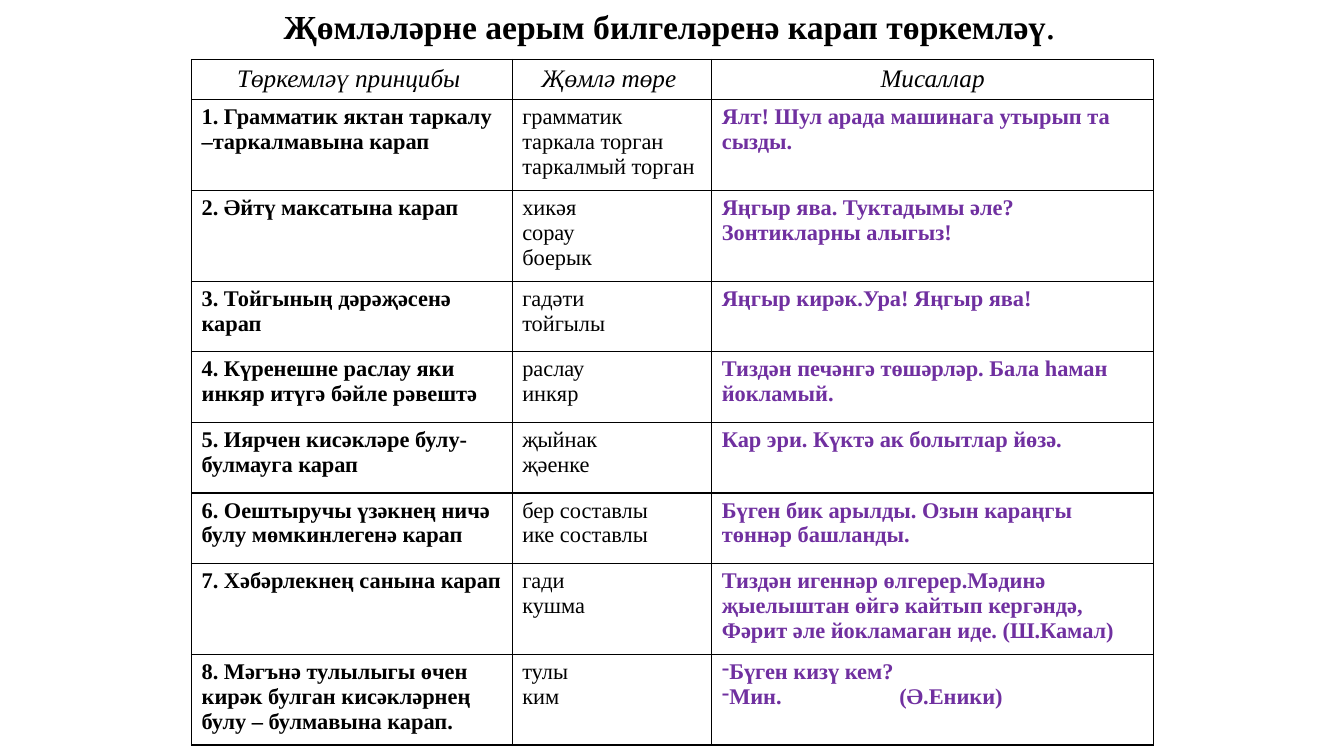
from lxml import etree
from pptx import Presentation
from pptx.dml.color import RGBColor
from pptx.enum.text import MSO_ANCHOR, PP_ALIGN
from pptx.oxml.ns import qn
from pptx.util import Inches, Pt

CENTER = PP_ALIGN.CENTER
LEFT = PP_ALIGN.LEFT
MIDDLE = MSO_ANCHOR.MIDDLE
FONT = "Times New Roman"
COLORS = {"text": "000000", "example": "7030A0", "border": "000000"}

headings = ["Төркемләү принцибы ", "Җөмлә төре ", "Мисаллар"]
classification = [
    ("1. Грамматик яктан таркалу –таркалмавына карап",
     ["грамматик", "таркала торган", "таркалмый торган"],
     ["Ялт! Шул арада машинага утырып та сызды."]),
    ("2. Әйтү максатына карап",
     ["хикәя", "сорау", "боерык"],
     ["Яңгыр ява. Туктадымы әле? Зонтикларны алыгыз!"]),
    ("3. Тойгының дәрәҗәсенә карап",
     ["гадәти", "тойгылы"],
     ["Яңгыр кирәк.Ура! Яңгыр ява!"]),
    ("4. Күренешне раслау яки инкяр итүгә бәйле рәвештә",
     ["раслау", "инкяр"],
     ["Тиздән печәнгә төшәрләр. Бала һаман йокламый."]),
    ("5. Иярчен кисәкләре булу-булмауга карап",
     ["җыйнак", "җәенке"],
     ["Кар эри. Күктә ак болытлар йөзә."]),
    ("6. Оештыручы үзәкнең ничә булу мөмкинлегенә карап",
     ["бер составлы", "ике составлы"],
     ["Бүген бик арылды. Озын караңгы төннәр башланды."]),
    ("7. Хәбәрлекнең санына карап",
     ["гади", "кушма"],
     ["Тиздән игеннәр өлгерер.Мәдинә җыелыштан өйгә кайтып кергәндә, "
      "Фәрит әле йокламаган иде. (Ш.Камал)"]),
    ("8. Мәгънә тулылыгы өчен кирәк булган кисәкләрнең булу – булмавына карап.",
     ["тулы", "ким"],
     ["Бүген кизү кем?", "Мин.\t(Ә.Еники)"]),
]
column_widths = [3.18, 1.98, 4.38]
row_heights = [0.4, 0.9, 0.9, 0.7, 0.7, 0.7, 0.7, 0.9, 0.9]


def add_run(paragraph, text, size, color="text", bold=False, italic=False):
    run = paragraph.add_run()
    run.text = text
    run.font.name = FONT
    run.font.size = Pt(size)
    run.font.bold = bold
    run.font.italic = italic
    run.font.color.rgb = RGBColor.from_string(COLORS[color])


def fill_cell(cell, lines, align=LEFT, **style):
    cell.fill.background()
    properties = cell._tc.get_or_add_tcPr()
    for position, side in enumerate(["a:lnL", "a:lnR", "a:lnT", "a:lnB"]):
        border = etree.Element(qn(side), w=str(Pt(1)))
        solid = etree.SubElement(border, qn("a:solidFill"))
        etree.SubElement(solid, qn("a:srgbClr"), val=COLORS["border"])
        properties.insert(position, border)
    frame = cell.text_frame
    for index, line in enumerate(lines):
        paragraph = frame.add_paragraph() if index else frame.paragraphs[0]
        paragraph.alignment = align
        add_run(paragraph, line, **style)


prs = Presentation()
prs.slide_width = Inches(13.33)
prs.slide_height = Inches(7.5)
slide = prs.slides.add_slide(prs.slide_layouts[6])

title = slide.shapes.add_textbox(Inches(2.14), 0, Inches(9), Inches(0.47)).text_frame
title.word_wrap = True
title.vertical_anchor = MIDDLE
title.paragraphs[0].alignment = CENTER
add_run(title.paragraphs[0], "Җөмләләрне аерым билгеләренә карап төркемләү", 24, bold=True)
add_run(title.paragraphs[0], ".", 28)

table = slide.shapes.add_table(
    len(row_heights), len(column_widths), Inches(1.9), Inches(0.59),
    Inches(sum(column_widths)), Inches(sum(row_heights))).table
table.horz_banding = False
for column, width in zip(table.columns, column_widths):
    column.width = Inches(width)
for row, height in zip(table.rows, row_heights):
    row.height = Inches(height)

for column, heading in enumerate(headings):
    fill_cell(table.cell(0, column), [heading], CENTER, size=18, italic=True)
for row, (principle, kinds, examples) in enumerate(classification, start=1):
    fill_cell(table.cell(row, 0), [principle], size=16, bold=True)
    fill_cell(table.cell(row, 1), kinds, size=16)
    fill_cell(table.cell(row, 2), examples, size=16, color="example", bold=True)

for reply in table.cell(len(classification), 2).text_frame.paragraphs:
    properties = reply._p.get_or_add_pPr()
    properties.set("marL", "0")
    properties.set("indent", "0")
    etree.SubElement(properties, qn("a:buFontTx"))
    etree.SubElement(properties, qn("a:buChar"), char="-")
    stops = etree.SubElement(properties, qn("a:tabLst"))
    etree.SubElement(stops, qn("a:tab"), pos=str(Inches(1.76)), algn="l")

prs.save("out.pptx")
